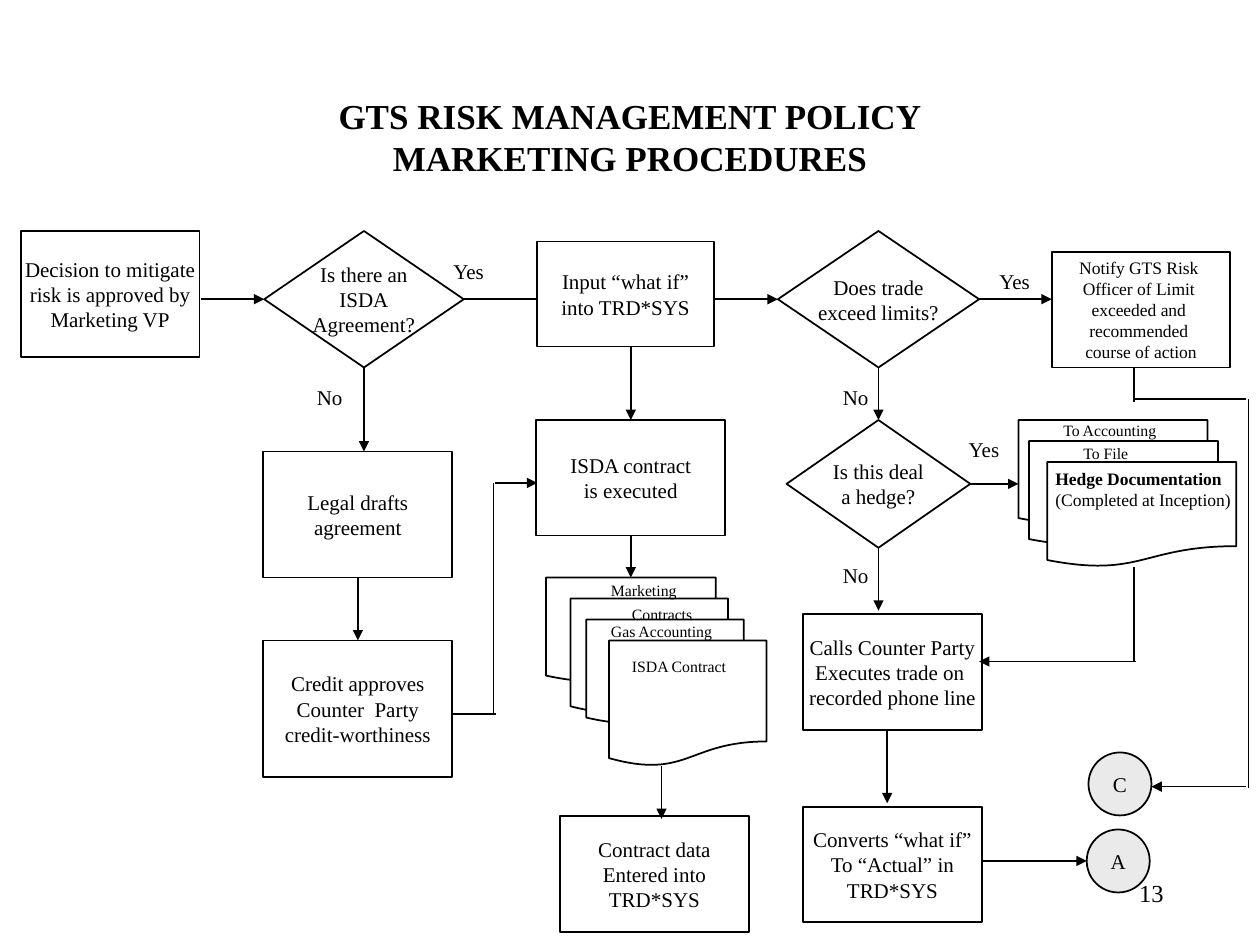
import pptx
import pptx.util
import pptx.dml.color
import pptx.enum.shapes
import pptx.enum.text
import pptx.oxml
import pptx.oxml.ns

Pt = pptx.util.Pt
FORM = pptx.enum.shapes.MSO_SHAPE
ALIGN = pptx.enum.text.PP_ALIGN
MID = pptx.enum.text.MSO_ANCHOR.MIDDLE
TOP = pptx.enum.text.MSO_ANCHOR.TOP
STEP = FORM.FLOWCHART_PROCESS
TEST = FORM.FLOWCHART_DECISION
PAPER = FORM.FLOWCHART_DOCUMENT
RING = FORM.FLOWCHART_CONNECTOR
BLACK, WHITE, GREY = "000000", "FFFFFF", "EAEAEA"


def paint(target, tone):
    target.rgb = pptx.dml.color.RGBColor.from_string(tone)


def add_run(para, text, size, bold=False):
    run = para.add_run()
    run.text = text
    run.font.name = "Times New Roman"
    run.font.size = Pt(size)
    run.font.bold = bold
    paint(run.font.color, BLACK)


def write(frame, lines, size, align, bold_first=False):
    for i, line in enumerate(lines):
        para = frame.paragraphs[0] if i == 0 else frame.add_paragraph()
        para.alignment = align
        add_run(para, line, size, bold_first and i == 0)


def place(box, left, top, wide, high):
    return Pt(box[0] + left), Pt(box[1] + top), Pt(wide), Pt(high)


def add_node(slide, box, form, spot, lines=(), size=12, tone=WHITE):
    node = slide.shapes.add_shape(form, *place(box, *spot))
    node.shadow.inherit = False
    node.fill.solid()
    paint(node.fill.fore_color, tone)
    paint(node.line.color, BLACK)
    node.line.width = Pt(1)
    node.text_frame.word_wrap = False
    node.text_frame.vertical_anchor = MID
    write(node.text_frame, lines, size, ALIGN.CENTER)
    return node


def add_label(slide, box, spot, lines, size=12, bold=False,
              align=ALIGN.LEFT, anchor=TOP, wrap=False):
    label = slide.shapes.add_textbox(*place(box, *spot))
    label.text_frame.word_wrap = wrap
    label.text_frame.vertical_anchor = anchor
    write(label.text_frame, lines, size, align, bold)


def find_side(nodes, x, y):
    for node in nodes:
        left, top, wide, high = node.left, node.top, node.width, node.height
        sides = [(left + wide / 2, top), (left, top + high / 2),
                 (left + wide / 2, top + high), (left + wide, top + high / 2)]
        for i, (across, down) in enumerate(sides):
            if max(abs(across - Pt(x)), abs(down - Pt(y))) < Pt(0.6):
                return node, i
    return None


def add_wire(slide, box, nodes, ends, arrow):
    x1, y1, x2, y2 = ends
    x1, x2, y1, y2 = x1 + box[0], x2 + box[0], y1 + box[1], y2 + box[1]
    wire = slide.shapes.add_connector(
        pptx.enum.shapes.MSO_CONNECTOR.STRAIGHT, Pt(x1), Pt(y1), Pt(x2), Pt(y2))
    start, stop = find_side(nodes, x1, y1), find_side(nodes, x2, y2)
    if start:
        wire.begin_connect(*start)
    if stop:
        wire.end_connect(*stop)
    paint(wire.line.color, BLACK)
    wire.line.width = Pt(1)
    if arrow:
        tail = pptx.oxml.parse_xml(
            '<a:tailEnd %s type="triangle"/>' % pptx.oxml.ns.nsdecls("a"))
        wire.line._get_or_add_ln().append(tail)
    wire._element.spPr.append(pptx.oxml.parse_xml(
        "<a:effectLst %s/>" % pptx.oxml.ns.nsdecls("a")))


def add_title(slide, box):
    title = slide.shapes.title
    title.left, title.top, title.width, title.height = map(Pt, box)
    title.text_frame.vertical_anchor = MID
    para = title.text_frame.paragraphs[0]
    para.alignment = ALIGN.CENTER
    add_run(para, "GTS RISK MANAGEMENT POLICY", 20, True)
    para.add_line_break()
    add_run(para, "MARKETING PROCEDURES", 20, True)


def add_start(slide, box):
    return [add_node(slide, box, STEP, (0, 0, 102, 72), [
        "Decision to mitigate", "risk is approved by", "Marketing VP"])]


def add_legal(slide, box):
    add_label(slide, box, (102, 12, 33, 22), ["Yes"])
    add_label(slide, box, (24, 84, 29, 22), ["No"])
    return [
        add_node(slide, box, TEST, (1, 0, 114, 78),
                 ["Is there an", "ISDA", "Agreement?"]),
        add_node(slide, box, STEP, (0.5, 126, 108, 72),
                 ["Legal drafts", "agreement"]),
        add_node(slide, box, STEP, (0.5, 234, 108, 78),
                 ["Credit approves", "Counter  Party", "credit-worthiness"])]


def add_deal(slide, box):
    return [
        add_node(slide, box, STEP, (1, 0, 101, 60),
                 ["Input “what if”", "into TRD*SYS"]),
        add_node(slide, box, STEP, (0.5, 102, 108, 66),
                 ["ISDA contract", "is executed"]),
        add_node(slide, box, STEP, (14, 328.5, 108, 66),
                 ["Contract data", "Entered into", "TRD*SYS"])]


def add_papers(slide, box, sheets, labels):
    for spot in sheets:
        add_node(slide, box, PAPER, spot)
    for spot, lines, size in labels:
        add_label(slide, box, spot, lines, size, bold=len(lines) > 1)


def add_trade(slide, box):
    add_label(slide, box, (120, 18, 42, 22), ["Yes"])
    add_label(slide, box, (102.5, 114, 33, 22), ["Yes"])
    for top in (84, 186):
        add_label(slide, box, (30.5, top, 29, 22), ["No"])
    return [
        add_node(slide, box, TEST, (0.5, 0, 115, 78),
                 ["Does trade", "exceed limits?"]),
        add_node(slide, box, TEST, (5.5, 108, 105, 73),
                 ["Is this deal", "a hedge?"]),
        add_node(slide, box, STEP, (15, 219, 102, 66), [
            "Calls Counter Party", "Executes trade on ", "recorded phone line"]),
        add_node(slide, box, STEP, (15, 329, 102, 66), [
            "Converts “what if”", "To “Actual” in", "TRD*SYS"])]


def add_notice(slide, box):
    return [add_node(slide, box, STEP, (0, 0, 102, 66), [
        "Notify GTS Risk ", "Officer of Limit ", "exceeded and ",
        "recommended ", "course of action"], 10)]


def add_exits(slide, box):
    for spot, mark in (((1, 0, 36, 36), "C"), ((0, 44, 36, 36), "A")):
        add_node(slide, box, RING, spot, [mark], tone=GREY)


def add_wires(slide, box, nodes):
    arrows = [
        (115, 171, 151, 171), (408, 171, 444.5, 171), (559.5, 171, 601, 171),
        (208, 210, 208, 258), (204.5, 330, 204.5, 366),
        (360.5, 198, 360.5, 240), (360.5, 306, 360.5, 330),
        (283, 276, 307, 276), (378, 438, 378, 468),
        (502, 210, 502, 240), (502, 313, 502, 349), (507, 417, 507, 459),
        (554.5, 276.5, 582, 276.5), (561, 492, 621, 492),
        (649, 378, 559.5, 378), (712, 449.5, 658, 449.5)]
    plain = [
        (265, 171, 307, 171), (259, 408, 283.5, 408), (282, 408, 282, 276),
        (648, 324, 648, 378), (648, 210, 648, 230),
        (648, 228, 712, 228), (713.5, 228, 713.5, 450)]
    for group, arrow in ((arrows, True), (plain, False)):
        for ends in group:
            add_wire(slide, box, nodes, ends, arrow)


def main():
    deck = pptx.Presentation()
    deck.slide_width, deck.slide_height = Pt(720), Pt(540)
    slide = deck.slides.add_slide(deck.slide_layouts[5])
    add_title(slide, (54, 48, 612, 60))
    nodes = add_start(slide, (12, 132))
    nodes += add_legal(slide, (150, 132))
    nodes += add_deal(slide, (306, 138))
    nodes += add_trade(slide, (444, 132))
    nodes += add_notice(slide, (601, 144))
    add_papers(slide, (312, 330), [
        (0, 0, 97, 60), (14, 12, 90, 66), (23, 24, 90, 60), (36, 36, 90, 72)], [
        ((30, -1.5, 60, 18), ["Marketing"], 9),
        ((42, 12, 49, 18), ["Contracts"], 9),
        ((30, 22, 73, 18), ["Gas Accounting"], 9),
        ((42, 42, 73, 29), ["ISDA Contract"], 9)])
    add_papers(slide, (582, 240), [
        (0, 0, 108, 60), (6, 12, 108, 60), (16.5, 24, 108, 60)], [
        ((18.5, -3, 68, 18), ["To Accounting"], 9),
        ((30, 10, 40, 18), ["To File"], 9),
        ((14, 24, 114.5, 32), ["Hedge Documentation", "(Completed at Inception)"], 10)])
    add_exits(slide, (621, 430))
    add_wires(slide, (0, 0), nodes)
    add_label(slide, (522, 492), (0, 0, 150, 36), ["13"], 14,
              align=ALIGN.RIGHT, anchor=MID, wrap=True)
    deck.save("out.pptx")


if __name__ == "__main__":
    main()
